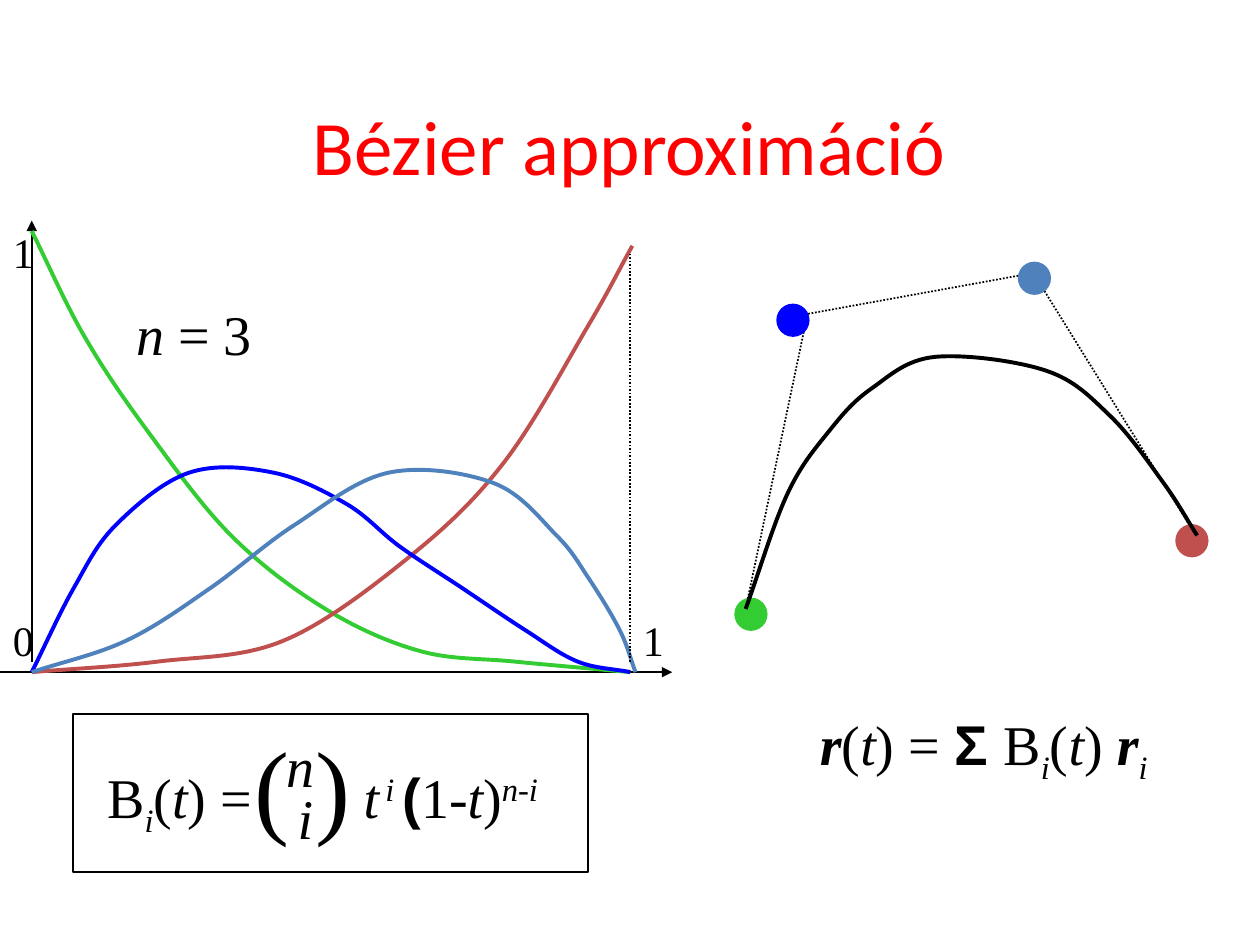
from dataclasses import dataclass

from pptx import Presentation
from pptx.dml.color import RGBColor
from pptx.enum.dml import MSO_LINE
from pptx.enum.shapes import MSO_CONNECTOR as Connector, MSO_SHAPE as Shape
from pptx.enum.text import MSO_ANCHOR as Anchor, PP_ALIGN as Align
from pptx.oxml.ns import qn
from pptx.oxml.xmlchemy import OxmlElement
from pptx.util import Cm, Pt


@dataclass(frozen=True)
class Theme:
    black = RGBColor(0x00, 0x00, 0x00)
    title = RGBColor(0xFF, 0x00, 0x00)
    weights = (
        RGBColor(0x33, 0xCC, 0x33),
        RGBColor(0x00, 0x00, 0xFF),
        RGBColor(0x4F, 0x81, 0xBD),
        RGBColor(0xC0, 0x50, 0x4D),
    )
    title_font = "Calibri"
    math_font = "Times New Roman"
    symbol_font = "Arial"
    title_size = Pt(44)
    bracket_size = Pt(60)
    math_size = Pt(32)
    label_size = Pt(24)
    gap_size = Pt(14)
    thin = Pt(1)
    thick = Pt(2.25)


@dataclass(frozen=True)
class Box:
    left: int
    top: int
    width: int
    height: int

    def inside(self, left, top, width, height):
        return Box(self.left + Cm(left), self.top + Cm(top), Cm(width), Cm(height))

    def grid_point(self, x, y):
        return (round(self.left + x * GRID),
                round(self.top + self.height - y * GRID))


THEME = Theme()
GRID = Cm(2.54) / 12
SUBSCRIPT, SUPERSCRIPT = "-25000", "30000"

BERNSTEIN_KNOTS = (
    ((0, 42), (5, 32), (11, 23), (19, 13), (28, 6), (37, 2), (46, 1), (57, 0)),
    ((0, 0), (4, 8), (8, 14), (15, 19), (23, 19), (30, 16), (35, 12), (41, 8),
     (47, 4), (52, 1), (57, 0)),
    ((0, 0), (9, 3), (17, 8), (25, 14), (34, 19), (44, 18), (50, 13), (53, 9),
     (56, 4), (57.5, 0)),
    ((0, 0), (12, 1), (24, 3), (36, 11), (45, 20), (53, 33), (57.2, 40.6)),
)
DRAW_ORDER = (0, 3, 1, 2)
CONTROL_CENTERS = ((1.5, 1.5), (5.5, 29.5), (28.5, 33.5), (43.5, 8.5))
CONTROL_POLYGON = ((1, 2), (6.9, 30.1), (28.4, 34), (44, 8.8))
BEZIER_KNOTS = ((1, 2), (5, 13), (9, 19), (13, 23), (19, 26), (29.6, 24.7),
                (35.7, 20.4), (40.8, 14), (44, 9))


def add_text(slide, box, runs, size=THEME.math_size, font=THEME.math_font,
             color=THEME.black, align=Align.LEFT, anchor=Anchor.TOP):
    shape = slide.shapes.add_textbox(box.left, box.top, box.width, box.height)
    frame = shape.text_frame
    frame.word_wrap = False
    frame.vertical_anchor = anchor
    paragraph = frame.paragraphs[0]
    paragraph.alignment = align
    paragraph.font.size = size
    paragraph.font.name = font
    paragraph.font.color.rgb = color
    for text, style in runs:
        run = paragraph.add_run()
        run.text = text
        if "b" in style:
            run.font.bold = True
        if "i" in style:
            run.font.italic = True
        if "symbol" == style:
            run.font.name = THEME.symbol_font
        if "gap" == style:
            run.font.size = THEME.gap_size
        if "_" in style:
            run._r.get_or_add_rPr().set("baseline", SUBSCRIPT)
        if "^" in style:
            run._r.get_or_add_rPr().set("baseline", SUPERSCRIPT)


def style_line(line, color, width, dotted=False):
    line.color.rgb = color
    line.width = width
    if dotted:
        line.dash_style = MSO_LINE.ROUND_DOT


def add_line(slide, start, end, arrow=False, dotted=False):
    connector = slide.shapes.add_connector(Connector.STRAIGHT, *start, *end)
    style_line(connector.line, THEME.black, THEME.thin, dotted)
    properties = connector._element.spPr
    if arrow:
        head = OxmlElement("a:tailEnd")
        head.set("type", "triangle")
        properties.find(qn("a:ln")).append(head)
    properties.append(OxmlElement("a:effectLst"))


def add_polyline(slide, points, color, width, dotted=False):
    builder = slide.shapes.build_freeform(*points[0], scale=1.0)
    builder.add_line_segments(points[1:], close=False)
    shape = builder.convert_to_shape()
    shape.fill.background()
    shape.shadow.inherit = False
    style_line(shape.line, color, width, dotted)
    return shape


def spline_points(knots):
    last = len(knots) - 1

    def tangent(index):
        before, after = max(index - 1, 0), min(index + 1, last)
        return [(b - a) / (3 * (after - before))
                for a, b in zip(knots[before], knots[after])]

    points = [knots[0]]
    for index in range(last):
        (x, y), (next_x, next_y) = knots[index], knots[index + 1]
        (dx, dy), (next_dx, next_dy) = tangent(index), tangent(index + 1)
        points += [(x + dx, y + dy), (next_x - next_dx, next_y - next_dy),
                   (next_x, next_y)]
    return points


def add_spline(slide, box, knots, color):
    points = [box.grid_point(*point) for point in spline_points(knots)]
    shape = add_polyline(slide, points, color, THEME.thick)
    segments = list(shape._element.iter(qn("a:lnTo")))
    for first in range(0, len(segments), 3):
        curve = OxmlElement("a:cubicBezTo")
        segments[first].addprevious(curve)
        for segment in segments[first:first + 3]:
            curve.append(segment[0])
            segment.getparent().remove(segment)


def add_title(slide, box):
    add_text(slide, box, [("Bézier approximáció", "")], THEME.title_size,
             THEME.title_font, THEME.title, Align.CENTER, Anchor.MIDDLE)


def add_weight_graph(slide, box):
    add_line(slide, box.grid_point(0, 1), box.grid_point(0, 43), arrow=True)
    add_line(slide, box.grid_point(-3, 0), box.grid_point(61, 0), arrow=True)
    for text, left, top in (("0", -0.64, 7.82), ("1", -0.64, 0), ("1", 12.06, 7.82)):
        add_text(slide, box.inside(left, top, 0.94, 1.27), [(text, "")],
                 THEME.label_size, align=Align.CENTER)
    for index in DRAW_ORDER:
        add_spline(slide, box, BERNSTEIN_KNOTS[index], THEME.weights[index])
    add_line(slide, box.grid_point(57, 1), box.grid_point(57, 40), dotted=True)
    add_text(slide, box.inside(1.85, 1.47, 2.84, 1.6),
             [("n ", "i"), ("= 3", "")], align=Align.CENTER)


def add_control_curve(slide, box):
    polygon = [box.grid_point(*point) for point in CONTROL_POLYGON]
    add_polyline(slide, polygon, THEME.black, THEME.thin, dotted=True)
    for (x, y), color in zip(CONTROL_CENTERS, THEME.weights):
        left, top = box.grid_point(x - 1.5, y + 1.5)
        dot = slide.shapes.add_shape(Shape.OVAL, left, top, round(3 * GRID), round(3 * GRID))
        dot.fill.solid()
        dot.fill.fore_color.rgb = color
        dot.shadow.inherit = False
        style_line(dot.line, color, THEME.thin)
    add_spline(slide, box, BEZIER_KNOTS, THEME.black)


def add_weight_formula(slide, box):
    add_text(slide, box.inside(0.43, 0.84, 3.43, 1.6),
             [("B", ""), ("i", "i_"), ("(", ""), ("t", "i"), (") =", "")])
    add_text(slide, box.inside(5.6, 0.84, 4.17, 1.6),
             [("t", "i"), (" ", "gap"), ("i ", "i^"), ("(", "symbol"), ("1-", ""),
              ("t", "i"), (")", ""), ("n-i", "i^")])
    add_text(slide, box.inside(3.4, 0, 2.44, 2.79), [("( )", "")], THEME.bracket_size)
    add_text(slide, box.inside(4.04, 0.23, 1.07, 1.6), [("n", "i")])
    add_text(slide, box.inside(4.27, 1.27, 0.81, 1.6), [("i", "i")])
    border = slide.shapes.add_shape(Shape.RECTANGLE, box.left, box.top, box.width, box.height)
    border.fill.background()
    border.shadow.inherit = False
    style_line(border.line, THEME.black, THEME.thin)


def add_curve_formula(slide, box):
    add_text(slide, box,
             [("r", "bi"), ("(", ""), ("t", "i"), (") = ", ""), ("Σ ", "symbol"),
              ("B", ""), ("i", "i_"), ("(", ""), ("t", "i"), (") ", ""),
              ("r", "bi"), ("i", "i_")])


def main():
    presentation = Presentation()
    presentation.slide_width, presentation.slide_height = Cm(25.4), Cm(19.05)
    slide = presentation.slides.add_slide(presentation.slide_layouts[6])
    add_title(slide, Box(Cm(0.2), Cm(1.32), Cm(24.97), Cm(3.18)))
    add_weight_formula(slide, Box(Cm(1.48), Cm(14.4), Cm(10.37), Cm(3.18)))
    add_curve_formula(slide, Box(Cm(16.28), Cm(14.17), Cm(7.19), Cm(1.63)))
    add_weight_graph(slide, Box(Cm(0.64), Cm(4.45), Cm(12.9), Cm(9.1)))
    add_control_curve(slide, Box(Cm(14.82), Cm(5.29), Cm(9.53), Cm(7.41)))
    presentation.save("out.pptx")


if __name__ == "__main__":
    main()
